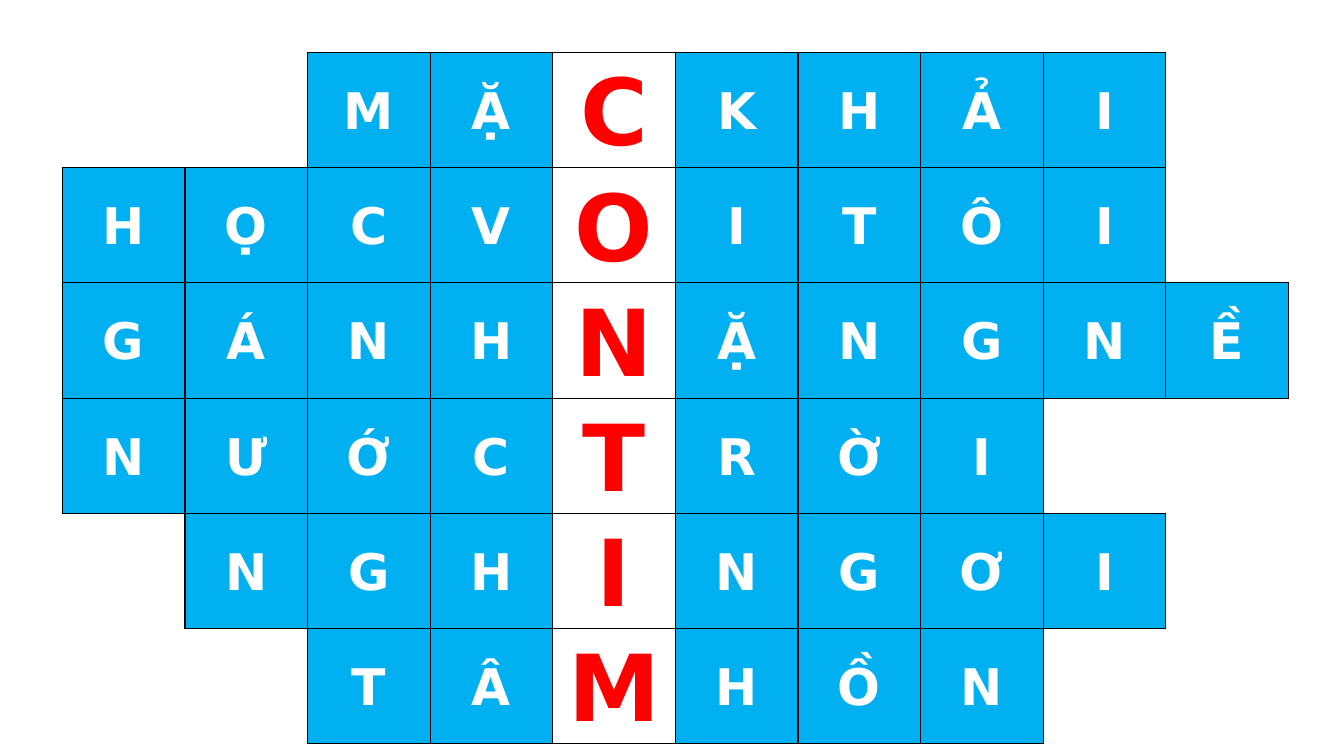
from lxml import etree
from pptx import Presentation
from pptx.dml.color import RGBColor
from pptx.enum.text import MSO_ANCHOR, PP_ALIGN
from pptx.oxml.ns import qn
from pptx.util import Cm, Pt

MIDDLE = MSO_ANCHOR.MIDDLE
CENTER = PP_ALIGN.CENTER
BLUE = RGBColor(0x00, 0xB0, 0xF0)
WHITE = RGBColor(0xFF, 0xFF, 0xFF)
RED = RGBColor(0xFF, 0x00, 0x00)
BLACK = RGBColor(0x00, 0x00, 0x00)
FONT = "DejaVu Sans"
WIDTH, HEIGHT = 3.09, 2.78
COLS, KEY = 10, 4
SIDES = {"a:lnL": (0, -1), "a:lnR": (0, 1), "a:lnT": (-1, 0), "a:lnB": (1, 0)}
WORDS = [
    (2, "MẶCKHẢI"),
    (0, "HỌCVOITÔI"),
    (0, "GÁNHNẶNGNỀ"),
    (0, "NƯỚCTRỜI"),
    (1, "NGHINGƠI"),
    (2, "TÂMHỒN"),
]


def put_text(cell, text, size, color):
    cell.vertical_anchor = MIDDLE
    cell.margin_left = cell.margin_right = Cm(0.18)
    cell.margin_top = cell.margin_bottom = 0
    para = cell.text_frame.paragraphs[0]
    para.alignment = CENTER
    para.line_spacing = 1.07
    run = para.add_run()
    run.text = text
    run.font.name = FONT
    run.font.size = Pt(size)
    run.font.bold = True
    run.font.color.rgb = color


def add_edge(cell, side, shown):
    edge = etree.SubElement(cell._tc.get_or_add_tcPr(), qn(side), w=str(Pt(1)))
    if shown:
        fill = etree.SubElement(edge, qn("a:solidFill"))
        etree.SubElement(fill, qn("a:srgbClr"), val=str(BLACK))
    else:
        etree.SubElement(edge, qn("a:noFill"))


deck = Presentation()
deck.slide_width = Cm(33.87)
deck.slide_height = Cm(19.05)
slide = deck.slides.add_slide(deck.slide_layouts[6])

letters = {}
for row, (start, word) in enumerate(WORDS):
    for col, letter in enumerate(word, start):
        letters[row, col] = letter

frame = slide.shapes.add_table(
    len(WORDS), COLS, Cm(1.57), Cm(1.32), Cm(WIDTH * COLS), Cm(HEIGHT * len(WORDS))
)
table = frame.table
table.first_row = False
table.horz_banding = False
for column in table.columns:
    column.width = Cm(WIDTH)
for line in table.rows:
    line.height = Cm(HEIGHT)

for row in range(len(WORDS)):
    for col in range(COLS):
        cell = table.cell(row, col)
        filled = (row, col) in letters
        for side, (down, right) in SIDES.items():
            add_edge(cell, side, filled or (row + down, col + right) in letters)
        if not filled:
            cell.fill.background()
            continue
        cell.fill.solid()
        if col == KEY:
            cell.fill.fore_color.rgb = WHITE
            put_text(cell, letters[row, col], size=66, color=RED)
        else:
            cell.fill.fore_color.rgb = BLUE
            put_text(cell, letters[row, col], size=36, color=WHITE)

deck.save("out.pptx")
